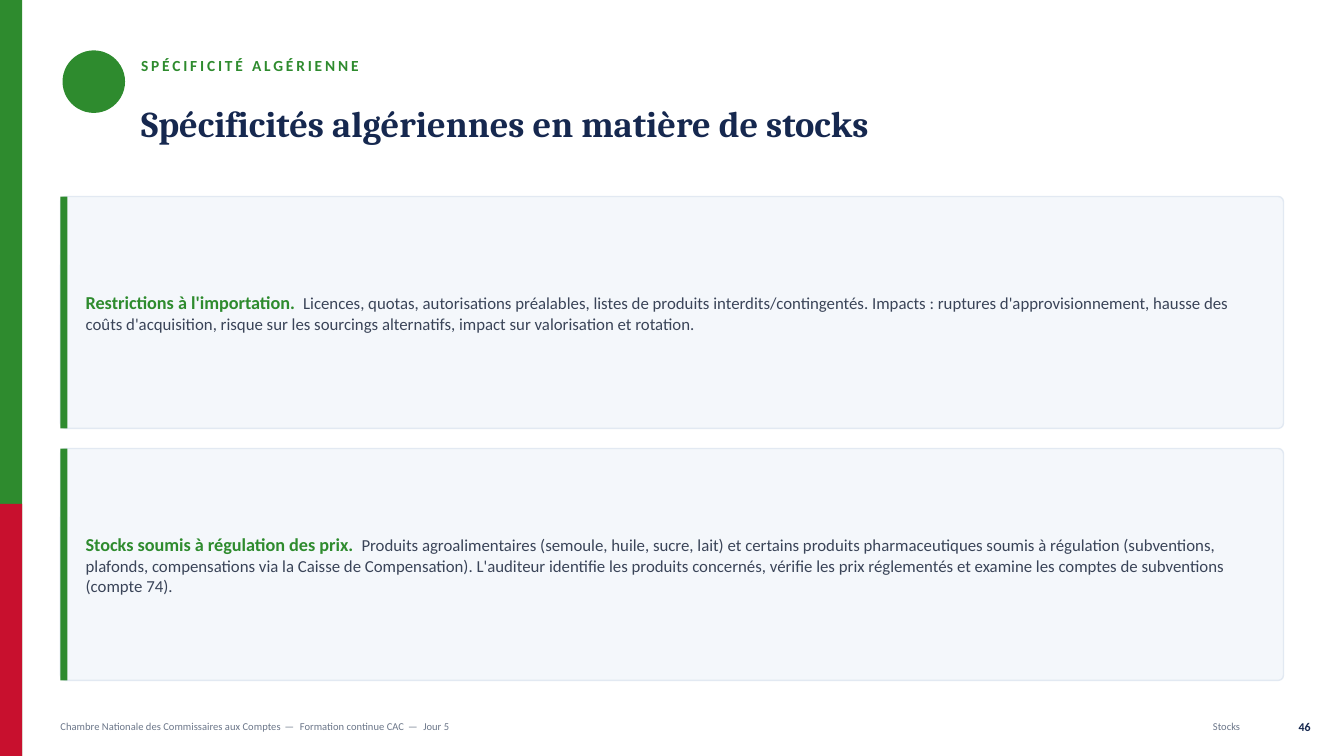
from dataclasses import dataclass
from typing import NamedTuple

from pptx import Presentation
from pptx.dml.color import RGBColor as Color
from pptx.enum.shapes import MSO_SHAPE as Shape
from pptx.enum.text import MSO_ANCHOR as Anchor, PP_ALIGN as Align
from pptx.util import Inches, Pt


@dataclass(frozen=True)
class Theme:
    green: str = "2E8B2E"
    red: str = "C8102E"
    navy: str = "16284F"
    body: str = "3A4458"
    muted: str = "6B7689"
    card: str = "F4F7FB"
    border: str = "E2E9F2"
    sans: str = "Calibri"
    serif: str = "Cambria"
    title_size: float = 26
    lead_size: float = 13
    body_size: float = 12
    label_size: float = 11
    number_size: float = 8.5
    footer_size: float = 7.5


class Box(NamedTuple):
    left: float
    top: float
    width: float
    height: float

    def inner(self, left, top, width, height):
        return Box(self.left + left, self.top + top, width, height)

    def lengths(self):
        return [Inches(value) for value in self]


THEME = Theme()
PAGE = Box(0, 0, 13.33, 7.5)
CARD_GAP = 0.2

CARDS = [
    ("Restrictions à l'importation.",
     "Licences, quotas, autorisations préalables, listes de produits "
     "interdits/contingentés. Impacts : ruptures d'approvisionnement, hausse des "
     "coûts d'acquisition, risque sur les sourcings alternatifs, impact sur "
     "valorisation et rotation."),
    ("Stocks soumis à régulation des prix.",
     "Produits agroalimentaires (semoule, huile, sucre, lait) et certains produits "
     "pharmaceutiques soumis à régulation (subventions, plafonds, compensations via "
     "la Caisse de Compensation). L'auditeur identifie les produits concernés, "
     "vérifie les prix réglementés et examine les comptes de subventions (compte 74)."),
]
FOOTER = ["Chambre Nationale des Commissaires aux Comptes", "Formation continue CAC", "Jour 5"]


def add_block(slide, box, fill, preset=Shape.RECTANGLE):
    shape = slide.shapes.add_shape(preset, *box.lengths())
    shape.shadow.inherit = False
    shape.fill.solid()
    shape.fill.fore_color.rgb = Color.from_string(fill)
    shape.line.fill.background()
    return shape


def style(font, size, color, bold=False, name=THEME.sans):
    font.name, font.size, font.bold = name, Pt(size), bold
    font.color.rgb = Color.from_string(color)


def add_paragraph_box(slide, box, align=Align.LEFT):
    frame = slide.shapes.add_textbox(*box.lengths()).text_frame
    frame.word_wrap = True
    frame.vertical_anchor = Anchor.MIDDLE
    frame.margin_left = frame.margin_right = frame.margin_top = frame.margin_bottom = 0
    paragraph = frame.paragraphs[0]
    paragraph.alignment = align
    return paragraph


def add_run(paragraph, text, tracking=0):
    run = paragraph.add_run()
    run.text = text
    if tracking:
        run._r.get_or_add_rPr().set("spc", str(round(tracking * 100)))
    return run


def add_side_band(slide, box):
    add_block(slide, box, THEME.green)
    third = box.height / 3
    add_block(slide, box.inner(0, 2 * third, box.width, third), THEME.red)


def add_header(slide, box):
    add_block(slide, box.inner(0, 0, 0.62, 0.62), THEME.green, Shape.OVAL)
    label = add_paragraph_box(slide, box.inner(0.78, 0, 11, 0.3))
    style(label.font, THEME.label_size, THEME.green, True)
    add_run(label, "SPÉCIFICITÉ ALGÉRIENNE", tracking=2)
    title = add_paragraph_box(slide, box.inner(0.78, 0.32, 11.3, 0.85))
    title.line_spacing = 0.95
    style(title.font, THEME.title_size, THEME.navy, True, THEME.serif)
    add_run(title, "Spécificités algériennes en matière de stocks")


def add_card(slide, box, lead, body):
    panel = add_block(slide, box, THEME.card, Shape.ROUNDED_RECTANGLE)
    panel.adjustments[0] = 0.022
    panel.line.color.rgb = Color.from_string(THEME.border)
    panel.line.width = Pt(1)
    add_block(slide, box.inner(0, 0, 0.07, box.height), THEME.green)
    paragraph = add_paragraph_box(slide, box.inner(0.25, 0.05, 11.7, box.height - 0.1))
    for text, tracking in ((lead, 0), (" ", 3)):
        style(add_run(paragraph, text, tracking).font, THEME.lead_size, THEME.green, True)
    style(add_run(paragraph, body).font, THEME.body_size, THEME.body)


def add_cards(slide, box):
    height = (box.height - CARD_GAP * (len(CARDS) - 1)) / len(CARDS)
    for row, (lead, body) in enumerate(CARDS):
        add_card(slide, box.inner(0, row * (height + CARD_GAP), box.width, height), lead, body)


def add_footer(slide, box):
    source = add_paragraph_box(slide, box.inner(0, 0, 9.2, box.height))
    style(source.font, THEME.footer_size, THEME.muted)
    for index, text in enumerate(FOOTER):
        if index:
            add_run(source, " — ", tracking=1.13)
        add_run(source, text)
    topic = add_paragraph_box(slide, box.inner(8.8, 0, 2.9, box.height), Align.RIGHT)
    style(topic.font, THEME.footer_size, THEME.muted)
    add_run(topic, "Stocks")
    number = add_paragraph_box(slide, box.inner(11.9, 0, 0.5, box.height), Align.RIGHT)
    style(number.font, THEME.number_size, THEME.navy, True)
    add_run(number, "46")


def main():
    presentation = Presentation()
    presentation.slide_width = Inches(PAGE.width)
    presentation.slide_height = Inches(PAGE.height)
    slide = presentation.slides.add_slide(presentation.slide_layouts[6])
    add_side_band(slide, PAGE.inner(0, 0, 0.22, PAGE.height))
    add_header(slide, PAGE.inner(0.62, 0.5, 12.08, 1.17))
    add_cards(slide, PAGE.inner(0.6, 1.95, 12.13, 4.8))
    add_footer(slide, PAGE.inner(0.6, 7.06, 12.4, 0.3))
    presentation.save("out.pptx")


if __name__ == "__main__":
    main()
